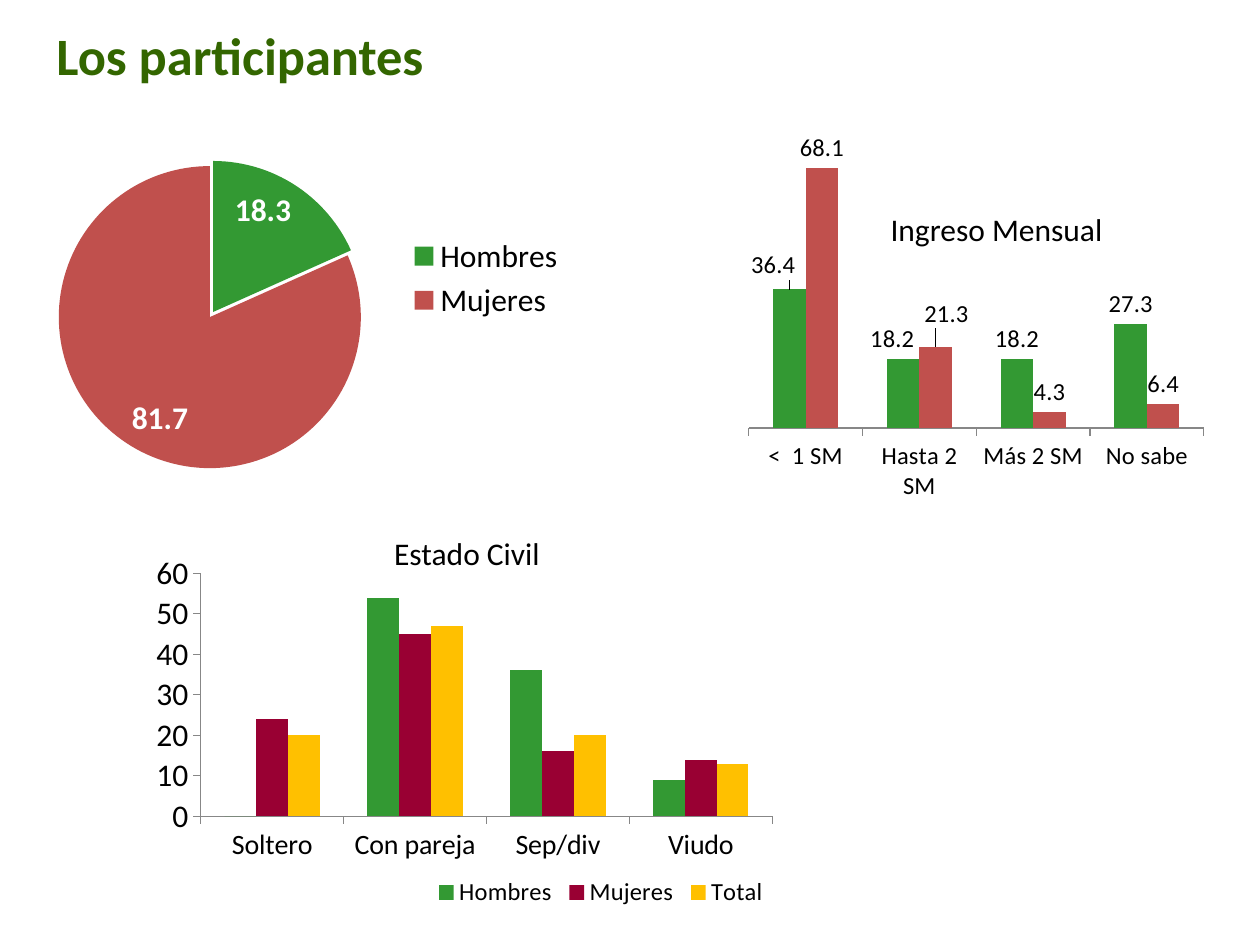
from lxml.etree import SubElement, Element
from pptx import Presentation
from pptx.chart.data import CategoryChartData
from pptx.dml.color import RGBColor
from pptx.enum.chart import XL_CHART_TYPE, XL_LABEL_POSITION, XL_LEGEND_POSITION, XL_TICK_MARK
from pptx.enum.text import MSO_AUTO_SIZE
from pptx.oxml.ns import qn
from pptx.util import Inches, Pt

BLACK = RGBColor(0x00, 0x00, 0x00)
WHITE = RGBColor(0xFF, 0xFF, 0xFF)
GREY = RGBColor(0x87, 0x87, 0x87)
DARK_GREEN = RGBColor(0x33, 0x66, 0x00)
GREEN = RGBColor(0x33, 0x99, 0x33)
RED = RGBColor(0xC0, 0x50, 0x4D)
WINE = RGBColor(0x99, 0x00, 0x33)
GOLD = RGBColor(0xFF, 0xC0, 0x00)


def make_layout(values, inner=False):
    """Return a manual layout element for x, y and, if given, width and height."""
    layout = Element(qn("c:layout"))
    manual = SubElement(layout, qn("c:manualLayout"))
    settings = []
    if inner:
        settings.append(("layoutTarget", "inner"))
    if len(values) == 4:
        settings += [("xMode", "edge"), ("yMode", "edge")]
    settings += zip("xywh", values)
    for name, value in settings:
        SubElement(manual, qn(f"c:{name}")).set("val", str(value))
    return layout


def add_text(page, text, place, size, color, bold=False):
    """Add a one-line text box."""
    box = page.shapes.add_textbox(*map(Inches, place))
    frame = box.text_frame
    frame.word_wrap = True
    frame.auto_size = MSO_AUTO_SIZE.SHAPE_TO_FIT_TEXT
    span = frame.paragraphs[0].add_run()
    span.text = text
    span.font.name = "Calibri"
    span.font.size = Pt(size)
    span.font.bold = bold
    span.font.color.rgb = color


def add_chart(page, kind, place, categories, series, plot_place):
    """Add a chart in the common font with a fixed plot area."""
    data = CategoryChartData()
    data.categories = categories
    for name, values in series:
        data.add_series(name, values)
    chart = page.shapes.add_chart(kind, *map(Inches, place), data).chart
    chart.has_title = False
    chart.has_legend = False
    chart.font.name = "Calibri"
    chart.font.size = Pt(18)
    chart.font.color.rgb = BLACK
    plot_area = chart.plots[0]._element.getparent()
    for old in plot_area.findall(qn("c:layout")):
        plot_area.remove(old)
    plot_area.insert(0, make_layout(plot_place, inner=True))
    return chart


def add_legend(chart, place, size):
    """Show the legend at a fixed place."""
    chart.has_legend = True
    legend = chart.legend
    legend.position = XL_LEGEND_POSITION.RIGHT
    legend.include_in_layout = False
    legend.font.size = Pt(size)
    element = legend._element
    for old in element.findall(qn("c:layout")):
        element.remove(old)
    element.find(qn("c:overlay")).addprevious(make_layout(place))


def style_columns(chart, colors, category_size, top):
    """Colour the columns and set up both axes."""
    plot = chart.plots[0]
    plot.gap_width = 150
    plot.overlap = 0
    plot.vary_by_categories = False
    for series, color in zip(plot.series, colors):
        series.format.fill.solid()
        series.format.fill.fore_color.rgb = color
    chart.value_axis.minimum_scale = 0
    chart.value_axis.maximum_scale = top
    chart.value_axis.has_major_gridlines = False
    chart.category_axis.tick_labels.font.size = Pt(category_size)
    for axis in (chart.category_axis, chart.value_axis):
        axis.major_tick_mark = XL_TICK_MARK.OUTSIDE
        axis.format.line.color.rgb = GREY
        axis.format.line.width = Pt(0.75)


def add_value_labels(series, offsets):
    """Label every column, moving the labels listed by point number."""
    labels = series.data_labels
    labels.show_value = True
    labels.position = XL_LABEL_POSITION.OUTSIDE_END
    labels.font.size = Pt(14)
    for number, offset in offsets.items():
        label = series.points[number].data_label
        label.position = XL_LABEL_POSITION.OUTSIDE_END
        label.font.size = Pt(14)
        element = labels._element.find(f"{qn('c:dLbl')}[{len(labels._element.findall(qn('c:dLbl')))}]")
        element.insert(1, make_layout(offset))


def add_marital_chart(page):
    """Add the marital status columns."""
    series = [("Hombres", (0, 54, 36, 9)), ("Mujeres", (24, 45, 16, 14)), ("Total", (20, 47, 20, 13))]
    chart = add_chart(page, XL_CHART_TYPE.COLUMN_CLUSTERED, (1.14, 4.19, 5.04, 3.27),
                      ("Soltero", "Con pareja", "Sep/div", "Viudo"), series, (0.09, 0.11, 0.9, 0.59))
    style_columns(chart, (GREEN, WINE, GOLD), 16, 60)
    chart.value_axis.major_unit = 10
    add_legend(chart, (0.45, 0.83, 0.54, 0.11), 14)


def add_gender_chart(page):
    """Add the pie of men and women."""
    chart = add_chart(page, XL_CHART_TYPE.PIE, (0.2, 0.6, 4.44, 3.25),
                      ("Hombres ", "Mujeres"), [("Series 1", (18.3, 81.7))], (0.06, 0.22, 0.54, 0.74))
    chart.plots[0].vary_by_categories = True
    series = chart.plots[0].series[0]
    for number, color in enumerate((GREEN, RED)):
        point = series.points[number]
        point.format.fill.solid()
        point.format.fill.fore_color.rgb = color
        label = point.data_label
        label.position = XL_LABEL_POSITION.INSIDE_END
        label.font.size = Pt(18)
        label.font.bold = True
        label.font.color.rgb = WHITE
    first = series._element.find(qn("c:dPt"))
    explosion = Element(qn("c:explosion"))
    explosion.set("val", "4")
    first.find(qn("c:spPr")).addprevious(explosion)
    add_legend(chart, (0.68, 0.38, 0.3, 0.23), 18)


def add_income_chart(page):
    """Add the monthly income columns."""
    series = [("Series 1", (36.4, 18.2, 18.2, 27.3)), ("Series 2", (68.1, 21.3, 4.3, 6.4))]
    chart = add_chart(page, XL_CHART_TYPE.COLUMN_CLUSTERED, (5.47, 0.7, 4.3, 3.46),
                      ("<  1 SM", "Hasta 2 SM", "Más 2 SM", "No sabe"), series, (0.11, 0.08, 0.84, 0.7))
    style_columns(chart, (GREEN, RED), 14, 80)
    chart.value_axis.visible = False
    men, women = chart.plots[0].series
    add_value_labels(men, {0: (-0.03, -0.01), 1: (-0.02, 0)})
    add_value_labels(women, {1: (0.02, -0.03)})


def main():
    """Build the slide and save it."""
    deck = Presentation()
    deck.slide_width = Inches(10)
    deck.slide_height = Inches(7.5)
    page = deck.slides.add_slide(deck.slide_layouts[6])
    add_marital_chart(page)
    add_gender_chart(page)
    add_text(page, "Los participantes", (0.35, 0.13, 3.54, 0.61), 30, DARK_GREEN, bold=True)
    add_income_chart(page)
    add_text(page, "Ingreso Mensual", (6.97, 1.62, 1.97, 0.4), 18, BLACK)
    add_text(page, "Estado Civil", (3.03, 4.19, 1.97, 0.4), 18, BLACK)
    deck.save("out.pptx")


if __name__ == "__main__":
    main()
